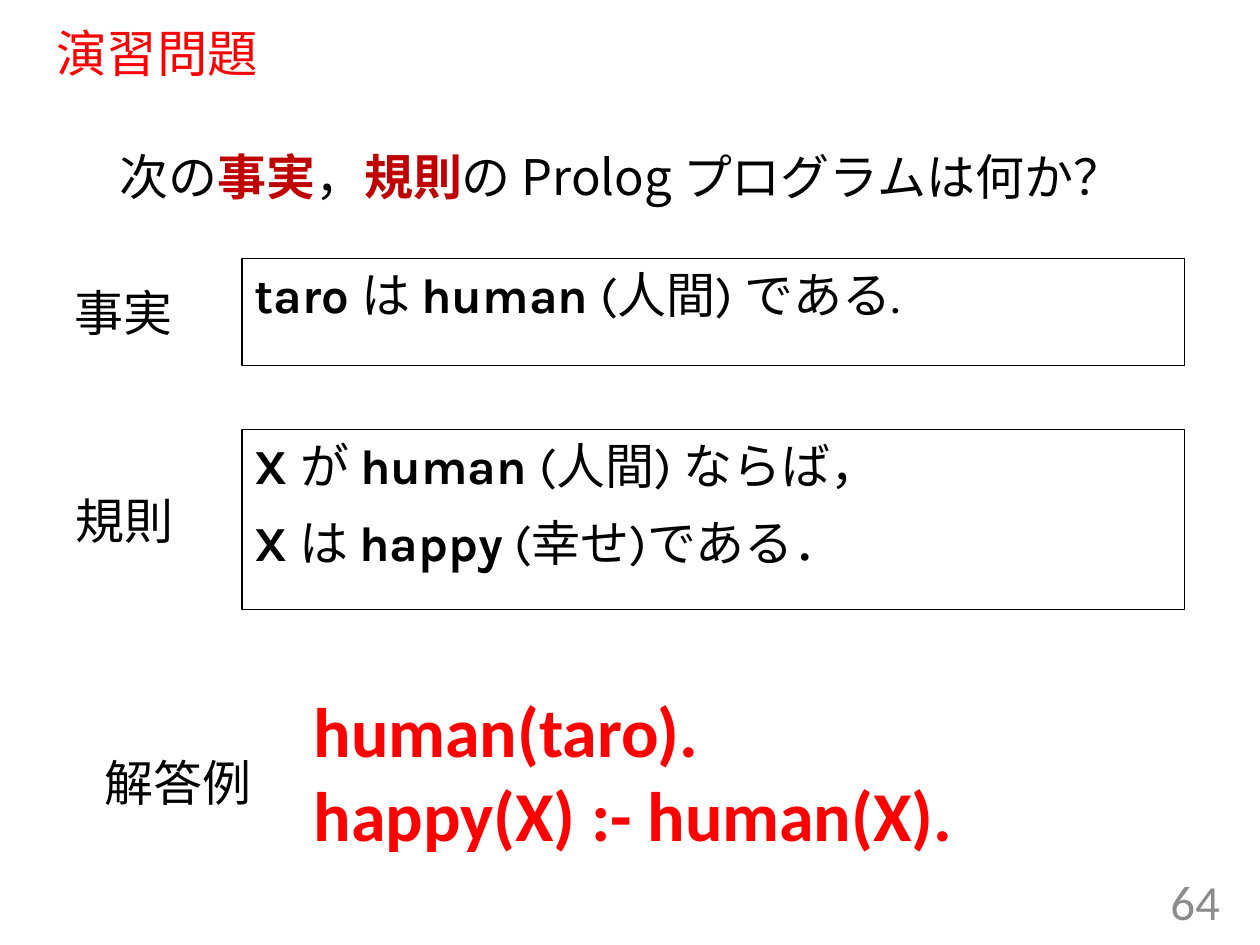
from dataclasses import dataclass

from pptx import Presentation
from pptx.dml.color import RGBColor
from pptx.enum.shapes import MSO_SHAPE
from pptx.enum.text import MSO_ANCHOR, PP_ALIGN
from pptx.util import Inches, Pt

RECTANGLE = MSO_SHAPE.RECTANGLE
TOP, MIDDLE = MSO_ANCHOR.TOP, MSO_ANCHOR.MIDDLE
LEFT, CENTER, RIGHT = PP_ALIGN.LEFT, PP_ALIGN.CENTER, PP_ALIGN.RIGHT


@dataclass(frozen=True)
class Theme:
    """Colours, fonts and type sizes of the slide."""
    ink: RGBColor = RGBColor(0x00, 0x00, 0x00)
    answer: RGBColor = RGBColor(0xFF, 0x00, 0x00)
    keyword: RGBColor = RGBColor(0xC0, 0x00, 0x00)
    muted: RGBColor = RGBColor(0x8C, 0x8C, 0x8C)
    japanese: str = "Noto Sans CJK JP"
    latin: str = "Calibri"
    statement: str = "Karla"
    body_size: float = 28
    title_size: float = 28.8
    answer_size: float = 40


THEME = Theme()


def style_para(para, font, size, color, align=LEFT, bold=None):
    """Set the alignment and the shared font of a paragraph."""
    para.alignment = align
    para.font.name = font
    para.font.size = Pt(size)
    para.font.color.rgb = color
    para.font.bold = bold


def add_spans(para, spans, bold_color):
    """Add (text, bold) spans, with the bold ones in their own colour."""
    for text, bold in spans:
        span = para.add_run()
        span.text = text
        span.font.bold = bold
        span.font.color.rgb = bold_color if bold else THEME.ink


def add_text(page, area, lines, font=THEME.japanese, size=THEME.body_size,
             color=THEME.ink, align=LEFT, bold=None, anchor=TOP, wrap=False):
    """Add a text box with one paragraph per line and return its frame."""
    frame = page.shapes.add_textbox(*map(Inches, area)).text_frame
    frame.word_wrap = wrap
    frame.vertical_anchor = anchor
    frame.text = "\n".join(lines)
    for para in frame.paragraphs:
        style_para(para, font, size, color, align, bold)
    return frame


def add_statement(page, top, height, lines):
    """Add an outlined box holding lines of mixed spans."""
    box = page.shapes.add_shape(
        RECTANGLE, Inches(1.92), Inches(top), Inches(7.48), Inches(height))
    box.shadow.inherit = False
    box.fill.background()
    box.line.color.rgb = THEME.ink
    box.line.width = Pt(0.75)
    frame = box.text_frame
    frame.word_wrap = True
    frame.vertical_anchor = TOP
    for index, spans in enumerate(lines):
        para = frame.add_paragraph() if index else frame.paragraphs[0]
        style_para(para, THEME.statement, THEME.body_size, THEME.ink)
        para.space_before = Pt(10)
        add_spans(para, spans, THEME.ink)


def add_question(page):
    """Add the question with its key words highlighted."""
    para = add_text(page, (0.85, 1.11, 8.34, 0.57), [""]).paragraphs[0]
    add_spans(para, [("次の", False), ("事実", True), ("，", False),
                     ("規則", True), ("の Prolog プログラムは何か？", False)],
              THEME.keyword)


def main():
    """Build the exercise slide and save it."""
    deck = Presentation()
    deck.slide_width, deck.slide_height = Inches(10), Inches(7.5)
    page = deck.slides.add_slide(deck.slide_layouts[6])

    title = add_text(page, (0.35, 0.19, 9.25, 0.51), ["演習問題"],
                     THEME.statement, THEME.title_size, THEME.answer,
                     anchor=MIDDLE, wrap=True)
    title.paragraphs[0].line_spacing = 0.9
    add_question(page)

    add_text(page, (0.49, 2.19, 0.99, 0.57), ["事実"])
    add_statement(page, 2.05, 0.85, [
        [("taro ", True), ("は ", False), ("human ", True),
         ("(人間) である.", False)],
    ])

    add_text(page, (0.49, 3.84, 0.99, 0.57), ["規則"], align=CENTER)
    add_statement(page, 3.41, 1.43, [
        [("X ", True), ("が ", False), ("human ", True),
         ("(人間) ならば，", False)],
        [("X", True), (" は ", False), ("happy", True),
         (" (幸せ)である．", False)],
    ])

    add_text(page, (0.72, 5.92, 1.38, 0.57), ["解答例"], align=CENTER)
    add_text(page, (2.39, 5.41, 5.33, 1.45),
             ["human(taro).", "happy(X) :- human(X)."],
             THEME.latin, THEME.answer_size, THEME.answer, bold=True)
    add_text(page, (7.53, 6.95, 2.25, 0.4), ["64"], THEME.latin,
             color=THEME.muted, align=RIGHT, anchor=MIDDLE, wrap=True)

    deck.save("out.pptx")


if __name__ == "__main__":
    main()
